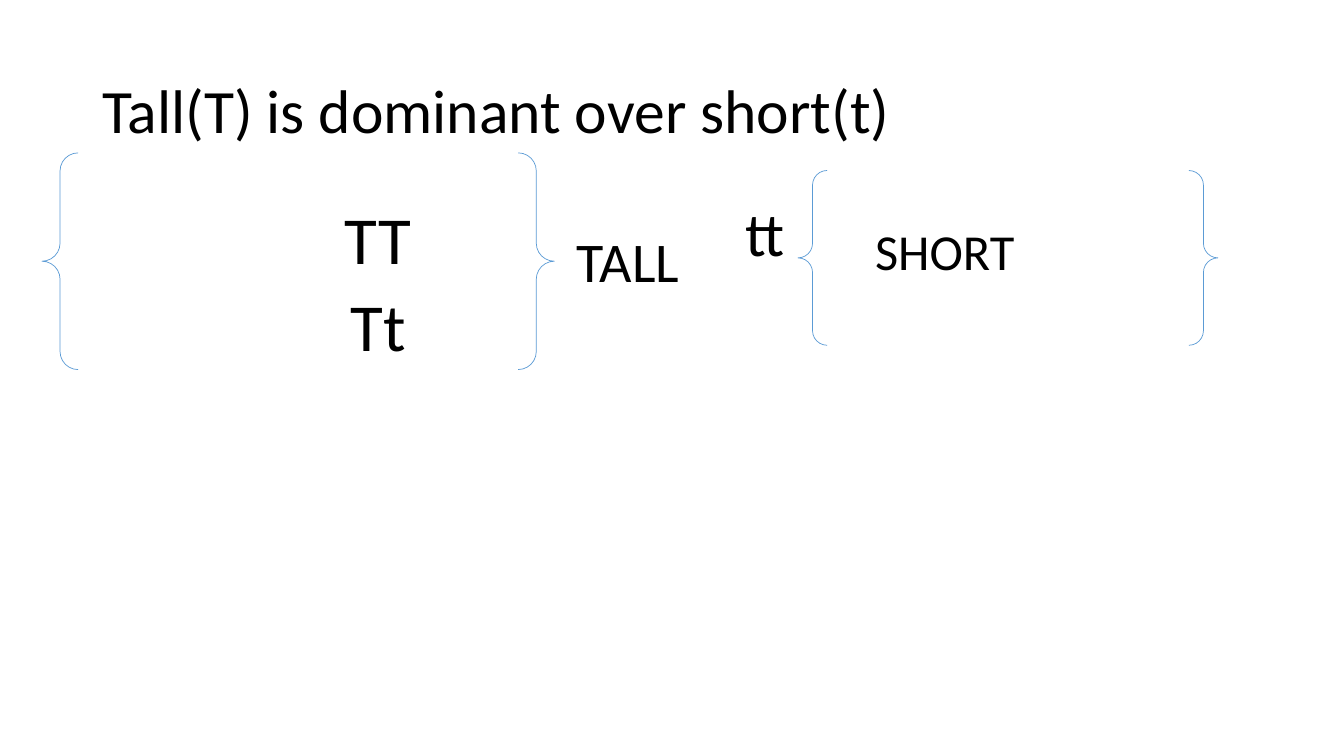
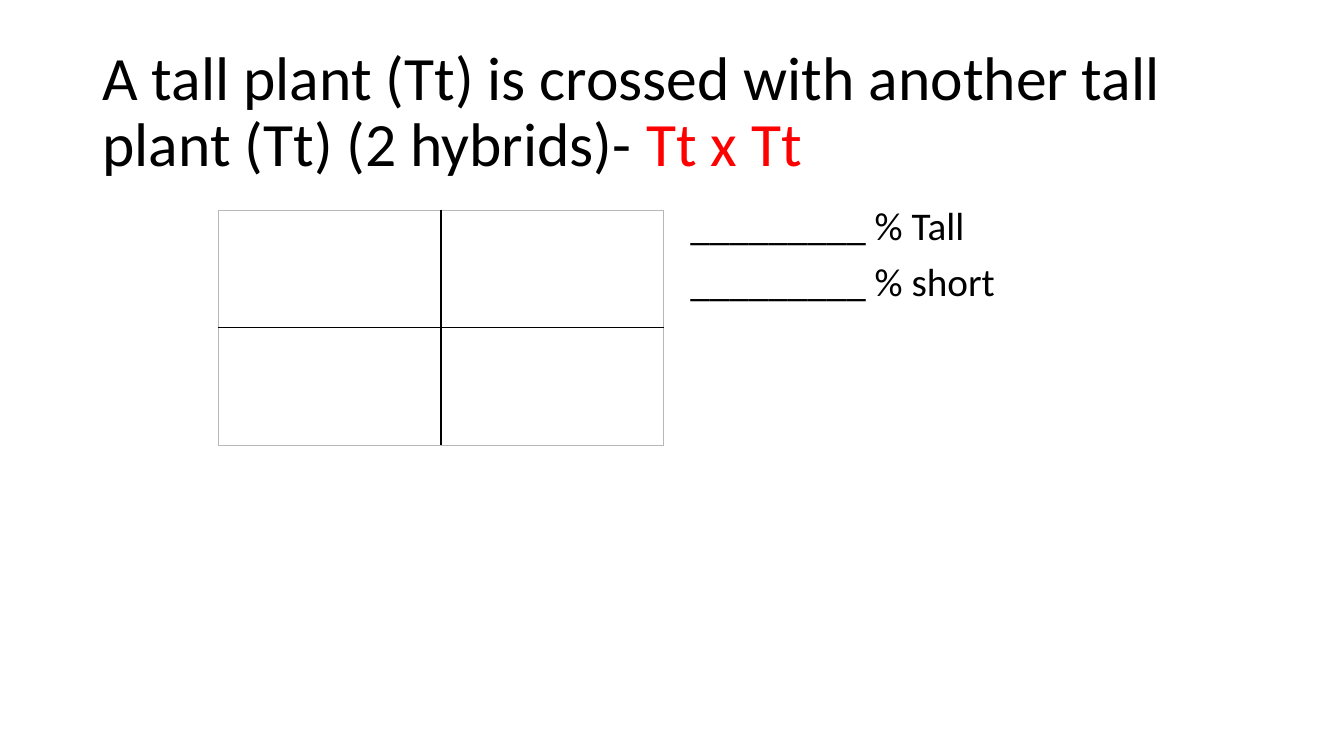
"""Build two slides on the cross of tall and short plants."""
from dataclasses import dataclass

from lxml import etree
from pptx import Presentation
from pptx.dml.color import RGBColor
from pptx.enum.shapes import MSO_SHAPE
from pptx.enum.text import MSO_ANCHOR, MSO_AUTO_SIZE, PP_ALIGN
from pptx.oxml.ns import qn
from pptx.util import Inches, Pt

BRACE = MSO_SHAPE.BRACE_PAIR if hasattr(MSO_SHAPE, "BRACE_PAIR") else MSO_SHAPE.DOUBLE_BRACE
MIDDLE = MSO_ANCHOR.MIDDLE
TOP = MSO_ANCHOR.TOP
FIXED = MSO_AUTO_SIZE.NONE
LEFT = PP_ALIGN.LEFT
CENTER = PP_ALIGN.CENTER

BLACK = RGBColor(0x00, 0x00, 0x00)
RED = RGBColor(0xFF, 0x00, 0x00)
BLUE = RGBColor(0x5B, 0x9B, 0xD5)
GRAY = RGBColor(0xB8, 0xB8, 0xB8)

FONT = "Calibri"
WIDE, HIGH = Inches(13.333), Inches(7.5)
COLS, ROWS = 160, 90


@dataclass(frozen=True)
class Box:
    col: float
    row: float
    cols: float
    rows: float

    def place(self) -> tuple[int, int, int, int]:
        return (
            round(WIDE * self.col / COLS),
            round(HIGH * self.row / ROWS),
            round(WIDE * self.cols / COLS),
            round(HIGH * self.rows / ROWS),
        )


@dataclass(frozen=True)
class Note:
    box: Box
    lines: tuple[str, ...]
    size: int
    align: PP_ALIGN = LEFT
    body: bool = True


HEAD = Box(11, 4.8, 138, 17.4)
SQUARE = Box(26, 25, 53, 28)
BRACES = (Box(5, 18.2, 61, 25.8), Box(95, 20.3, 50, 20.8))
TRAITS = (
    Note(Box(11, 24, 68, 57), ("TT", "Tt"), 48, CENTER),
    Note(Box(87.6, 23.6, 46.4, 59.4), ("tt",), 44),
    Note(Box(67.5, 26.4, 21, 9.2), ("TALL",), 40, body=False),
    Note(Box(103, 25.6, 24.5, 8.5), ("SHORT",), 36, body=False),
)
ODDS = Note(Box(81, 24, 68, 57), ("_________ % Tall", "_________ % short"), 28)


def style(run, size: int, color: RGBColor = BLACK) -> None:
    run.font.name = FONT
    run.font.size = Pt(size)
    run.font.color.rgb = color


def add_page(deck, text: str, accent: str = ""):
    page = deck.slides.add_slide(deck.slide_layouts[5])
    head = page.shapes.title
    head.left, head.top, head.width, head.height = HEAD.place()
    frame = head.text_frame
    frame.text = text
    frame.auto_size = FIXED
    frame.word_wrap = True
    frame.vertical_anchor = MIDDLE
    para = frame.paragraphs[0]
    para.alignment = LEFT
    para.line_spacing = 0.9
    style(para.runs[0], 44)
    if accent:
        run = para.add_run()
        run.text = accent
        style(run, 44, RED)
    return page


def add_note(page, note: Note) -> None:
    frame = page.shapes.add_textbox(*note.box.place()).text_frame
    frame.word_wrap = True
    frame.vertical_anchor = TOP
    frame.text = "\n".join(note.lines)
    for para in frame.paragraphs:
        para.alignment = note.align
        if note.body:
            para.line_spacing = 0.9
            para.space_before = Pt(10)
        style(para.runs[0], note.size)


def add_brace(page, box: Box) -> None:
    brace = page.shapes.add_shape(BRACE, *box.place())
    brace.shadow.inherit = False
    brace.fill.background()
    brace.line.color.rgb = BLUE
    brace.line.width = Pt(0.5)


def add_edge(cell, side: str, color: RGBColor, width: float) -> None:
    edge = etree.SubElement(cell._tc.get_or_add_tcPr(), qn(f"a:{side}"), w=str(Pt(width)))
    fill = etree.SubElement(edge, qn("a:solidFill"))
    etree.SubElement(fill, qn("a:srgbClr"), val=str(color))


def add_square(page, box: Box, count: int = 2) -> None:
    grid = page.shapes.add_table(count, count, *box.place()).table
    grid.first_row = False
    grid.horz_banding = False
    last = count - 1
    for row in range(count):
        for col in range(count):
            cell = grid.cell(row, col)
            outer = {"lnL": col == 0, "lnR": col == last, "lnT": row == 0, "lnB": row == last}
            for side, rim in outer.items():
                add_edge(cell, side, GRAY if rim else BLACK, 0.5 if rim else 1)
            cell.fill.background()


def main() -> None:
    deck = Presentation()
    deck.slide_width, deck.slide_height = WIDE, HIGH

    page = add_page(deck, "Tall(T) is dominant over short(t)")
    for box in BRACES:
        add_brace(page, box)
    for note in TRAITS:
        add_note(page, note)

    page = add_page(
        deck,
        "A tall plant (Tt) is crossed with another tall plant (Tt) (2 hybrids)- ",
        "Tt x Tt",
    )
    add_square(page, SQUARE)
    add_note(page, ODDS)

    deck.save("out.pptx")


if __name__ == "__main__":
    main()
